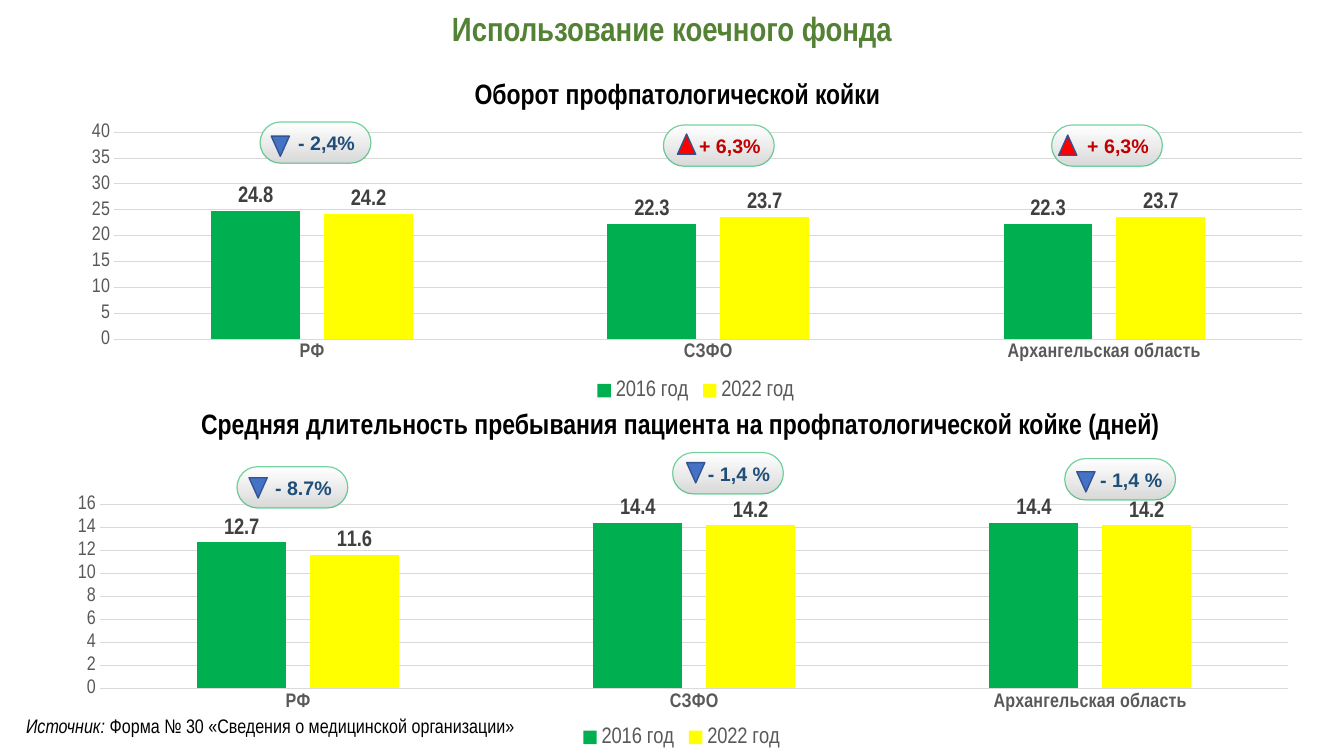
"""Build the slide on the use of hospital beds."""
from lxml import etree
from pptx import Presentation
from pptx.chart.data import CategoryChartData
from pptx.dml.color import RGBColor
from pptx.enum.chart import XL_CHART_TYPE, XL_LABEL_POSITION, XL_LEGEND_POSITION, XL_TICK_MARK
from pptx.enum.shapes import MSO_SHAPE
from pptx.enum.text import MSO_ANCHOR, PP_ALIGN
from pptx.oxml import parse_xml
from pptx.oxml.ns import nsdecls, qn
from pptx.util import Inches, Pt

COLUMN = XL_CHART_TYPE.COLUMN_CLUSTERED
OUTSIDE = XL_LABEL_POSITION.OUTSIDE_END
BOTTOM = XL_LEGEND_POSITION.BOTTOM
NO_TICK = XL_TICK_MARK.NONE
PILL, TRIANGLE = MSO_SHAPE.ROUNDED_RECTANGLE, MSO_SHAPE.ISOSCELES_TRIANGLE
MIDDLE, TOP = MSO_ANCHOR.MIDDLE, MSO_ANCHOR.TOP
CENTER, LEFT = PP_ALIGN.CENTER, PP_ALIGN.LEFT

WHITE = RGBColor(0xFF, 0xFF, 0xFF)
BLACK = RGBColor(0x00, 0x00, 0x00)
SILVER = RGBColor(0xD9, 0xD9, 0xD9)
GRAY = RGBColor(0x59, 0x59, 0x59)
DARK = RGBColor(0x40, 0x40, 0x40)
OLIVE = RGBColor(0x54, 0x82, 0x35)
GREEN = RGBColor(0x00, 0xB0, 0x50)
YELLOW = RGBColor(0xFF, 0xFF, 0x00)
BLUE = RGBColor(0x44, 0x72, 0xC4)
BLUE_LINE = RGBColor(0x32, 0x54, 0x91)
NAVY = RGBColor(0x1F, 0x4E, 0x79)
RED = RGBColor(0xFF, 0x00, 0x00)
DARK_RED = RGBColor(0xC0, 0x00, 0x00)

NARROW = "Arial Narrow"
WIDTH, HEIGHT = Inches(13.33), Inches(7.5)
REGIONS = ("РФ", "СЗФО", "Архангельская область")
YEARS = (("2016 год", GREEN), ("2022 год", YELLOW))


def area(left, top, width, height):
    """Turn percentages of the slide into a position and a size."""
    return (int(WIDTH * left / 100), int(HEIGHT * top / 100),
            int(WIDTH * width / 100), int(HEIGHT * height / 100))


def style(font, size, color, bold=False, name=NARROW):
    """Set the look of a font."""
    font.name, font.size, font.bold = name, Pt(size), bold
    font.color.rgb = color


def add_text(s, place, runs, size, color=BLACK, bold=False, align=CENTER,
             anchor=TOP, spacing=1.0):
    """Add a text box from (text, italic) runs."""
    tf = s.shapes.add_textbox(*area(*place)).text_frame
    tf.word_wrap, tf.vertical_anchor = True, anchor
    p = tf.paragraphs[0]
    p.alignment, p.line_spacing = align, spacing
    for text, italic in runs:
        r = p.add_run()
        r.text = text
        style(r.font, size, color, bold)
        r.font.italic = italic


def add_badge(s, text, left, top, dx, dy):
    """Add a pill with the change and a triangle for its direction."""
    rises = text.startswith("+")
    sp = s.shapes.add_shape(PILL, *area(left, top, 8.25, 5.47))
    sp.shadow.inherit = False
    sp.adjustments[0] = 0.5
    sp.fill.gradient()
    sp.fill.gradient_angle = 270
    for stop, color, position in zip(sp.fill.gradient_stops, (WHITE, SILVER), (0, 1)):
        stop.color.rgb, stop.position = color, position
    sp.line.color.rgb, sp.line.width = GREEN, Pt(0.85)
    rgb = sp.line._ln.find(".//" + qn("a:srgbClr"))
    etree.SubElement(rgb, qn("a:alpha")).set("val", "55000")
    tf = sp.text_frame
    tf.word_wrap, tf.vertical_anchor = True, MIDDLE
    tf.margin_left, tf.margin_right = Inches(0.22), 0
    tf.margin_top = tf.margin_bottom = Inches(0.04)
    p = tf.paragraphs[0]
    p.alignment = CENTER
    r = p.add_run()
    r.text = text
    style(r.font, 14, DARK_RED if rises else NAVY, True, "Arial")

    sp = s.shapes.add_shape(TRIANGLE, *area(left + dx, top + dy, 1.35, 2.67))
    sp.shadow.inherit = False
    sp.rotation = 0 if rises else 180
    sp.fill.solid()
    sp.fill.fore_color.rgb = RED if rises else BLUE
    sp.line.color.rgb, sp.line.width = BLUE_LINE, Pt(1)


def set_plot_area(chart, top, height):
    """Fix the inner plot area as shares of the chart."""
    shares = (("x", 0.04), ("y", top), ("w", 0.94), ("h", height))
    modes = "".join(f'<c:{k}Mode val="edge"/>' for k in "xy")
    values = "".join(f'<c:{k} val="{v}"/>' for k, v in shares)
    plot_area = chart.plots[0]._element.getparent()
    for old in plot_area.findall(qn("c:layout")):
        plot_area.remove(old)
    plot_area.insert(0, parse_xml(
        f'<c:layout {nsdecls("c")}><c:manualLayout><c:layoutTarget val="inner"/>'
        f'{modes}{values}</c:manualLayout></c:layout>'))


def add_columns(s, place, values, top_value, unit, plot):
    """Add a column chart comparing the two years by region."""
    data = CategoryChartData()
    data.categories = REGIONS
    for (year, _), row in zip(YEARS, values):
        data.add_series(year, row)
    chart = s.shapes.add_chart(COLUMN, *area(*place), data).chart
    style(chart.font, 10, BLACK)
    chart.has_title = False
    chart.has_legend = True
    chart.legend.position, chart.legend.include_in_layout = BOTTOM, False
    style(chart.legend.font, 16, GRAY)
    cat, val = chart.category_axis, chart.value_axis
    for axis, bold in ((cat, True), (val, False)):
        axis.major_tick_mark = axis.minor_tick_mark = NO_TICK
        style(axis.tick_labels.font, 14, GRAY, bold)
    val.minimum_scale, val.maximum_scale, val.major_unit = 0, top_value, unit
    val.format.line.fill.background()
    for line in (cat.format.line, val.major_gridlines.format.line):
        line.color.rgb, line.width = SILVER, Pt(0.75)
    bars = chart.plots[0]
    bars.gap_width, bars.overlap, bars.vary_by_categories = 219, -27, False
    for series, (_, color) in zip(bars.series, YEARS):
        series.format.fill.solid()
        series.format.fill.fore_color.rgb = color
        labels = series.data_labels
        labels.show_value, labels.position = True, OUTSIDE
        style(labels.font, 16, DARK, True)
    set_plot_area(chart, *plot)


def add_panel(s, heading, heading_at, badges, *chart):
    """Add a heading, its chart and the badges of change."""
    add_text(s, (*heading_at, 91.8, 4.5), [(heading, False)], 20, bold=True, spacing=0.7)
    add_columns(s, *chart)
    for badge in badges:
        add_badge(s, *badge)


def main():
    """Build and save the slide."""
    prs = Presentation()
    prs.slide_width, prs.slide_height = WIDTH, HEIGHT
    s = prs.slides.add_slide(prs.slide_layouts[6])
    add_text(s, (0, -0.4, 100, 8.1), [("Использование коечного фонда", False)],
             24, OLIVE, True, anchor=MIDDLE)
    add_panel(s, "Оборот профпатологической койки", (4.5, 10.67),
              (("- 2,4%", 19.35, 16.13, 0.83, 1.87),
               ("+ 6,3%", 49.36, 16.53, 1.05, 1.2),
               ("+ 6,3%", 78.24, 16.53, 0.53, 1.34)),
              (4.73, 15.6, 94.07, 38), ((24.8, 22.3, 22.3), (24.2, 23.7, 23.7)),
              40, 5, (0.05, 0.72))
    add_panel(s, "Средняя длительность пребывания пациента на профпатологической "
              "койке (дней)", (4.73, 54.27),
              (("- 8.7%", 17.63, 61.73, 0.9, 1.47),
               ("- 1,4 %", 50.04, 59.87, 1.05, 1.33),
               ("- 1,4 %", 79.22, 60.67, 0.9, 1.73)),
              (3.68, 64.53, 94.07, 34.93), ((12.7, 14.4, 14.4), (11.6, 14.2, 14.2)),
              17, 2, (0.02, 0.74))
    add_text(s, (1.2, 93.73, 55, 4.5),
             [("Источник: ", True), ("Форма № 30 «Сведения о медицинской организации»", False)],
             14, align=LEFT)
    prs.save("out.pptx")


if __name__ == "__main__":
    main()
